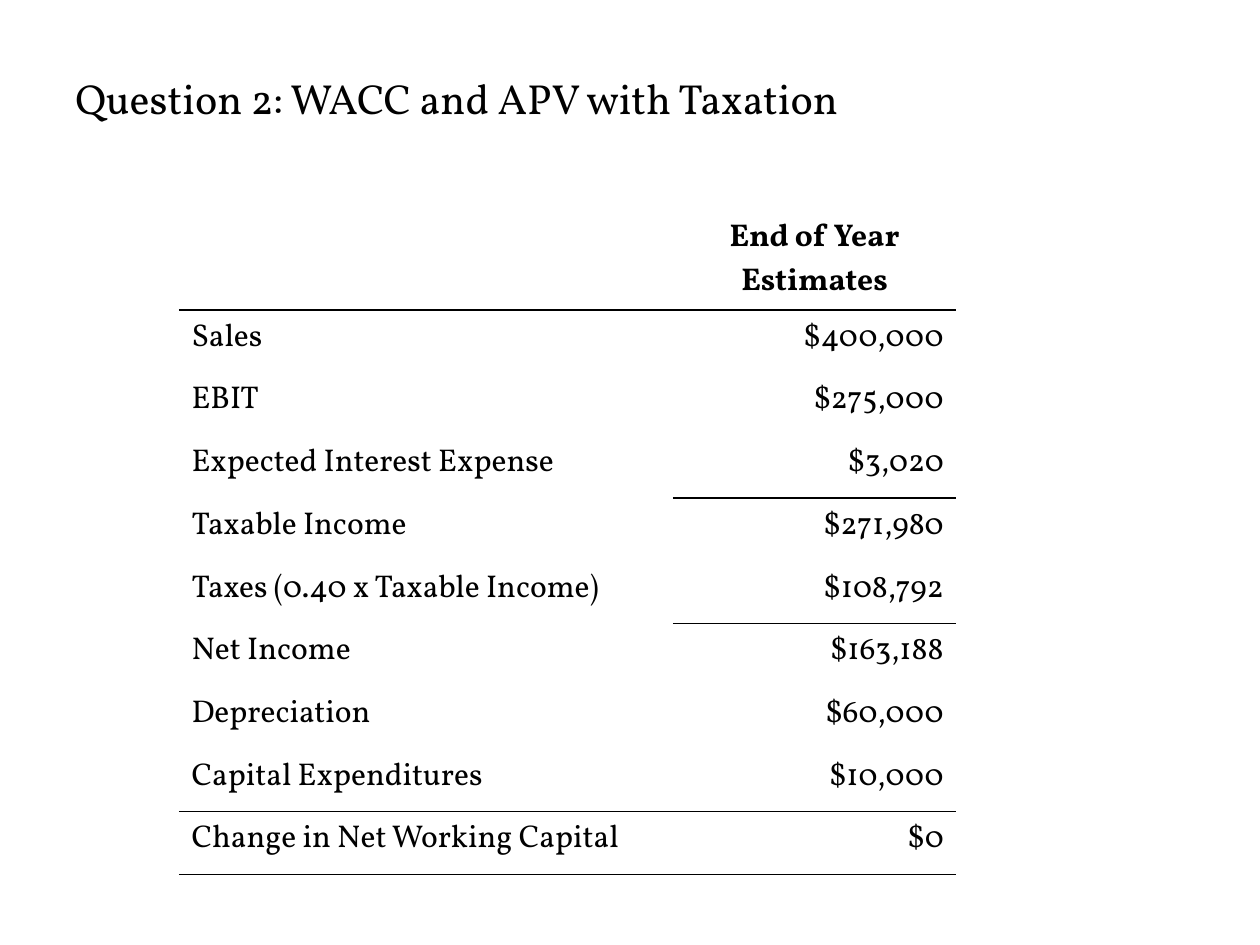
from lxml import etree
from pptx import Presentation
from pptx import util as u
from pptx.dml.color import RGBColor
from pptx.enum import text
from pptx.oxml import ns

COLORS = {"ink": "000000", "page": "FFFFFF"}
FONT = "Vollkorn"
RULE_WIDTH = u.Pt(1)


def add_span(para, words, size, bold=False):
    span = para.add_run()
    span.text = words
    span.font.name = FONT
    span.font.size = u.Pt(size)
    span.font.bold = bold
    span.font.color.rgb = RGBColor.from_string(COLORS["ink"])


def set_edge(cell, edge, ruled):
    props = cell._tc.get_or_add_tcPr()
    line = etree.SubElement(props, ns.qn(f"a:{edge}"), w=str(RULE_WIDTH))
    if ruled:
        fill = etree.SubElement(line, ns.qn("a:solidFill"))
        etree.SubElement(fill, ns.qn("a:srgbClr"), val=COLORS["ink"])
    else:
        etree.SubElement(line, ns.qn("a:noFill"))


deck = Presentation()
deck.slide_width, deck.slide_height = u.Inches(10), u.Inches(7.5)
page = deck.slides.add_slide(deck.slide_layouts[6])
page.background.fill.solid()
page.background.fill.fore_color.rgb = RGBColor.from_string(COLORS["page"])

# Title
box = page.shapes.add_textbox(u.Inches(0.5), u.Inches(0.3), u.Inches(9), u.Inches(0.95))
box.text_frame.word_wrap = True
box.text_frame.vertical_anchor = text.MSO_ANCHOR.MIDDLE
add_span(box.text_frame.paragraphs[0], "Question 2: WACC and APV with Taxation", 24)

# Table content: label, estimate
rows = [
    ("", "End of Year\nEstimates"),
    ("Sales", "$400,000"),
    ("EBIT", "$275,000"),
    ("Expected Interest Expense", "$3,020"),
    ("Taxable Income", "$271,980"),
    ("Taxes (0.40 x Taxable Income)", "$108,792"),
    ("Net Income", "$163,188"),
    ("Depreciation", "$60,000"),
    ("Capital Expenditures", "$10,000"),
    ("Change in Net Working Capital", "$0"),
]
# Columns that carry a rule below each row
rules_below = {0: (0, 1), 3: (1,), 5: (1,), 8: (0, 1), 9: (0, 1)}

# Table without style or banding
header_height, body_height = u.Inches(0.79), u.Inches(4.48)
frame = page.shapes.add_table(
    len(rows), 2, u.Inches(1.42), u.Inches(1.67), u.Inches(6.17), header_height + body_height)
table = frame.table
table.first_row = table.horz_banding = False
style = table._tbl.tblPr.find(ns.qn("a:tableStyleId"))
style.text = "{2D5ABB26-0587-4C30-8999-92F81FD0307C}"
for column, width in zip(table.columns, (3.92, 2.25)):
    column.width = u.Inches(width)

for r, values in enumerate(rows):
    table.rows[r].height = body_height // (len(rows) - 1) if r else header_height
    for c, value in enumerate(values):
        cell = table.cell(r, c)
        set_edge(cell, "lnL", False)
        set_edge(cell, "lnR", False)
        set_edge(cell, "lnT", c in rules_below.get(r - 1, ()))
        set_edge(cell, "lnB", c in rules_below.get(r, ()))
        cell.fill.background()
        for n, words in enumerate(value.splitlines()):
            para = cell.text_frame.add_paragraph() if n else cell.text_frame.paragraphs[0]
            if c:
                para.alignment = text.PP_ALIGN.RIGHT if r else text.PP_ALIGN.CENTER
            add_span(para, words, 18, bold=r == 0)

deck.save("out.pptx")
